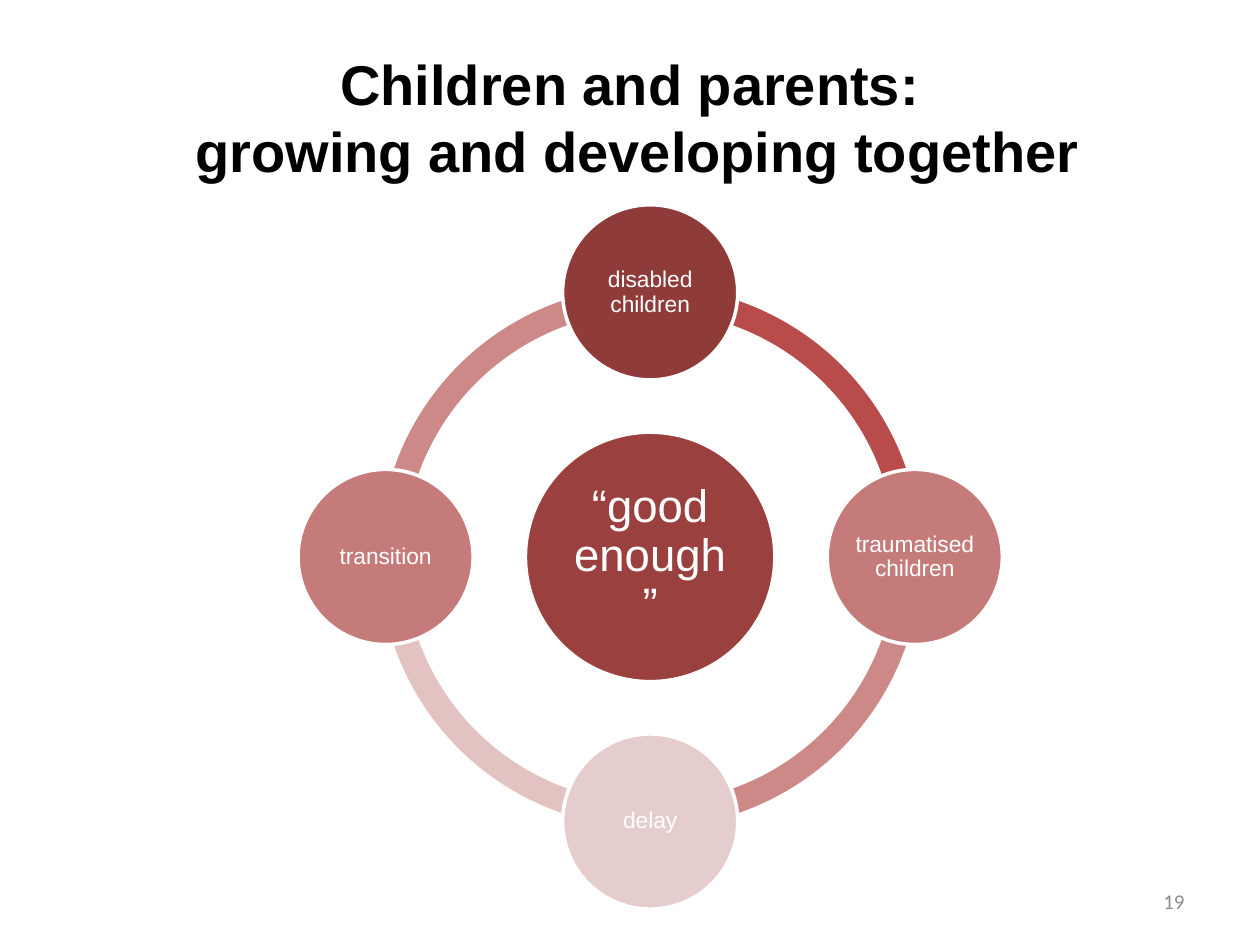
from pptx import Presentation
from pptx.dml.color import RGBColor
from pptx.enum.shapes import MSO_SHAPE as Shape
from pptx.enum.text import MSO_ANCHOR as Anchor, PP_ALIGN as Align
from pptx.util import Inches, Pt


def color(hex_code):
    return RGBColor.from_string(hex_code)


def write(shape, text, size, font="Arial", fill="FFFFFF", bold=False,
          align=Align.CENTER, spacing=1.0, inset=None):
    frame = shape.text_frame
    frame.word_wrap = True
    frame.vertical_anchor = Anchor.MIDDLE
    if inset is not None:
        frame.margin_left = frame.margin_right = Inches(inset)
        frame.margin_top = frame.margin_bottom = Inches(inset)
    frame.text = text
    paragraph = frame.paragraphs[0]
    paragraph.alignment = align
    paragraph.line_spacing = spacing
    for run in paragraph.runs:
        run.font.name = font
        run.font.size = Pt(size)
        run.font.bold = bold
        run.font.color.rgb = color(fill)


prs = Presentation()
prs.slide_width, prs.slide_height = Inches(10), Inches(7.5)
slide = prs.slides.add_slide(prs.slide_layouts[6])
shapes = slide.shapes

# Title
title = shapes.add_textbox(Inches(0.5), Inches(0.3), Inches(9), Inches(1.25))
write(title, "Children and parents:\v growing and developing together", 32,
      fill="000000", bold=True)

# Ring of four quarter arcs: start angle in degrees, fill
center_x, center_y = 5.16, 4.42
ring_size = 4.3
for start, fill in [(180, "CC8987"), (90, "E3C3C2"), (0, "CC8987"), (270, "B74C4A")]:
    arc = shapes.add_shape(
        Shape.BLOCK_ARC, Inches(center_x - ring_size / 2),
        Inches(center_y - ring_size / 2), Inches(ring_size), Inches(ring_size))
    # One degree is 60000 angle units, which is 0.6 as an adjustment
    arc.adjustments[0] = start * 0.6
    arc.adjustments[1] = (start + 90) % 360 * 0.6
    arc.adjustments[2] = 0.046
    arc.fill.solid()
    arc.fill.fore_color.rgb = color(fill)
    arc.line.fill.background()
    arc.shadow.inherit = False

# Centre circle and the four around it: text, offset from centre, diameter, fill, size, inset
orbit = 2.1
circles = [
    ("“good enough”", 0, 0, 1.98, "9A403E", 26, 0.04),
    ("disabled children", 0, -orbit, 1.39, "8E3B39", 13, 0.02),
    ("traumatised children", orbit, 0, 1.39, "C47B79", 13, 0.02),
    ("delay", 0, orbit, 1.39, "E6CDCD", 13, 0.02),
    ("transition", -orbit, 0, 1.39, "C47B79", 13, 0.02),
]
for text, dx, dy, diameter, fill, size, inset in circles:
    circle = shapes.add_shape(
        Shape.OVAL, Inches(center_x + dx - diameter / 2),
        Inches(center_y + dy - diameter / 2), Inches(diameter), Inches(diameter))
    circle.fill.solid()
    circle.fill.fore_color.rgb = color(fill)
    circle.line.color.rgb = color("FFFFFF")
    circle.line.width = Pt(2)
    circle.shadow.inherit = False
    write(circle, text, size, spacing=0.9, inset=inset)

# Slide number
page_number = shapes.add_textbox(Inches(7.17), Inches(6.95), Inches(2.33), Inches(0.4))
write(page_number, "19", 12, font="Calibri", fill="8C8C8C", align=Align.RIGHT)

prs.save("out.pptx")
